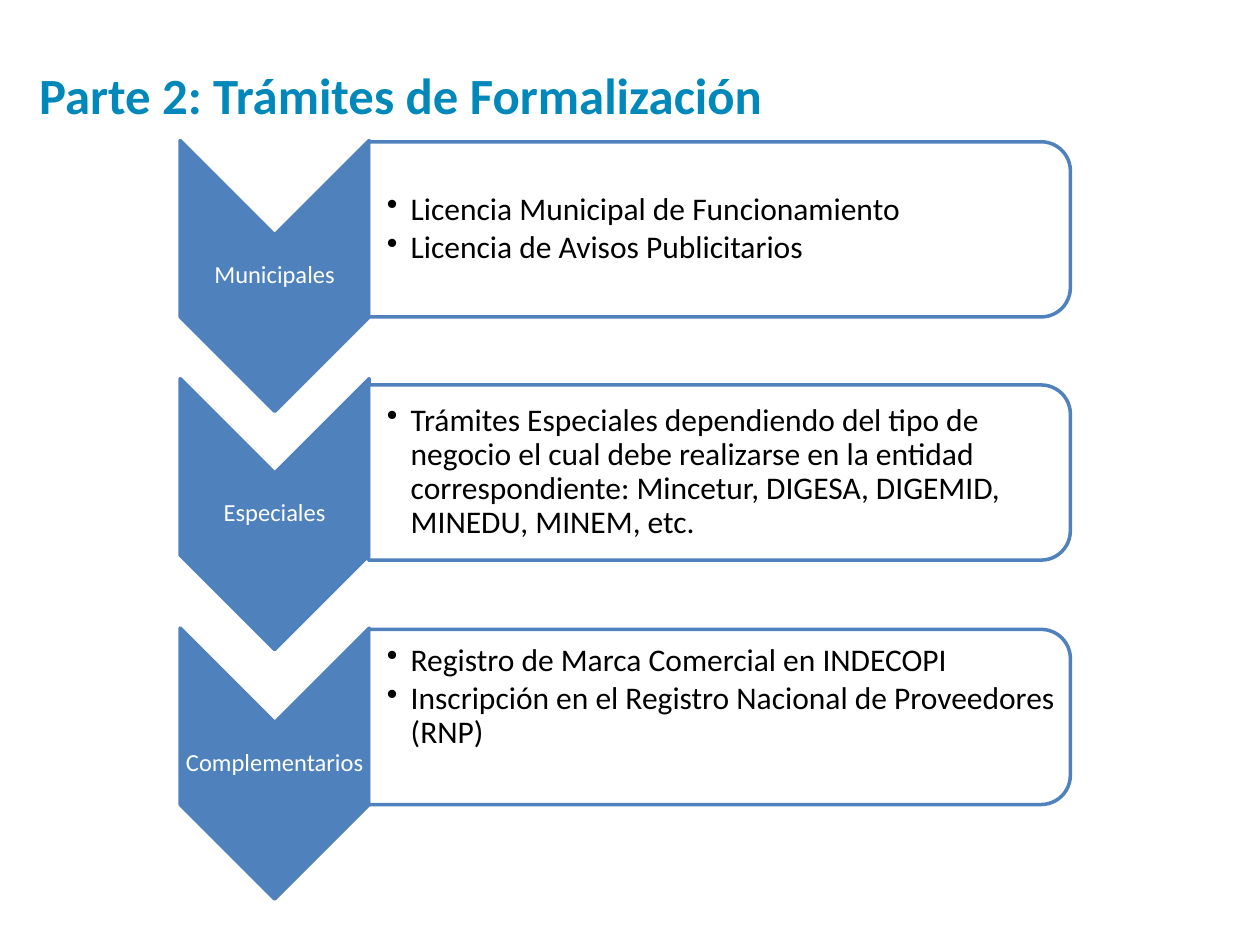
from lxml.etree import SubElement
from pptx import Presentation
from pptx.dml.color import RGBColor
from pptx.enum.shapes import MSO_SHAPE
from pptx.enum.text import MSO_ANCHOR, PP_ALIGN
from pptx.oxml.ns import qn
from pptx.util import Inches, Pt

TITLE = "Parte 2: Trámites de Formalización"
BLUE, WHITE, BLACK, TEAL = "4F81BD", "FFFFFF", "000000", "0088BA"

# Each row: label, arrow centre, card centre, bottom inset, bullets
ROWS = [
    ("Municipales", 2.19, 1.82, 0.01, [
        "Licencia Municipal de Funcionamiento",
        "Licencia de Avisos Publicitarios",
    ]),
    ("Especiales", 4.08, 3.75, 0.01, [
        "Trámites Especiales dependiendo del tipo de negocio el cual debe "
        "realizarse en la entidad correspondiente: Mincetur, DIGESA, DIGEMID, "
        "MINEDU, MINEM, etc.",
    ]),
    ("Complementarios", 6.06, 5.69, 0.32, [
        "Registro de Marca Comercial en INDECOPI",
        "Inscripción en el Registro Nacional de Proveedores (RNP)",
    ]),
]
ARROW_X, CARD_X, TEXT_X = 2.18, 5.71, 5.68


def rgb(value):
    return RGBColor.from_string(value)


def place(center_x, center_y, width, height):
    return [Inches(n) for n in (center_x - width / 2, center_y - height / 2, width, height)]


def add_turned(page, kind, frame, fill):
    shape = page.shapes.add_shape(kind, *frame)
    shape.rotation = 90
    shape.shadow.inherit = False
    shape.fill.solid()
    shape.fill.fore_color.rgb = rgb(fill)
    shape.line.color.rgb = rgb(BLUE)
    shape.line.width = Pt(2)
    return shape


def set_font(para, size, color, bold=False):
    font = para.font
    font.name, font.size, font.bold = "Calibri", Pt(size), bold
    font.color.rgb = rgb(color)


def add_bullet(para):
    properties = para._p.get_or_add_pPr()
    properties.set("marL", str(Inches(0.19)))
    properties.set("indent", str(-Inches(0.19)))
    SubElement(properties, qn("a:buChar"), char="•")


def add_text(page, frame, lines, size, color, left=0.01, bottom=0.01, bullets=False):
    box = page.shapes.add_textbox(*frame).text_frame
    box.word_wrap = True
    box.vertical_anchor = MSO_ANCHOR.MIDDLE
    box.margin_left, box.margin_bottom = Inches(left), Inches(bottom)
    box.margin_top = box.margin_right = Inches(0.01)
    for number, line in enumerate(lines):
        para = box.add_paragraph() if number else box.paragraphs[0]
        para.text = line
        para.line_spacing = 0.9
        if bullets:
            para.space_after = Pt(2.7)
            add_bullet(para)
        else:
            para.alignment = PP_ALIGN.CENTER
        set_font(para, size, color)


def add_row(page, label, arrow_y, card_y, bottom, bullets):
    arrow = add_turned(page, MSO_SHAPE.CHEVRON, place(ARROW_X, arrow_y, 2.15, 1.5), BLUE)
    arrow.adjustments[0] = 0.5
    add_text(page, place(ARROW_X, arrow_y, 1.5, 0.64), [label], 14, WHITE)
    card = add_turned(page, MSO_SHAPE.ROUND_2_SAME_RECTANGLE,
                      place(CARD_X, card_y, 1.39, 5.57), WHITE)
    color = card.fill._xPr.find(qn("a:solidFill"))[0]
    SubElement(color, qn("a:alpha"), val="90000")
    add_text(page, place(TEXT_X, card_y, 5.5, 1.26), bullets, 18, BLACK, 0.14, bottom, True)


def main():
    """Build the slide of formalisation procedures."""
    deck = Presentation()
    deck.slide_width, deck.slide_height = Inches(10), Inches(7.5)
    page = deck.slides.add_slide(deck.slide_layouts[5])
    for row in ROWS:
        add_row(page, *row)
    title = page.shapes.title
    title.left, title.top, title.width, title.height = (
        Inches(n) for n in (0.21, 0.36, 8.31, 0.77))
    title.text_frame.vertical_anchor = MSO_ANCHOR.MIDDLE
    para = title.text_frame.paragraphs[0]
    para.text = TITLE
    para.alignment = PP_ALIGN.LEFT
    set_font(para, 29, TEAL, True)
    deck.save("out.pptx")


if __name__ == "__main__":
    main()
